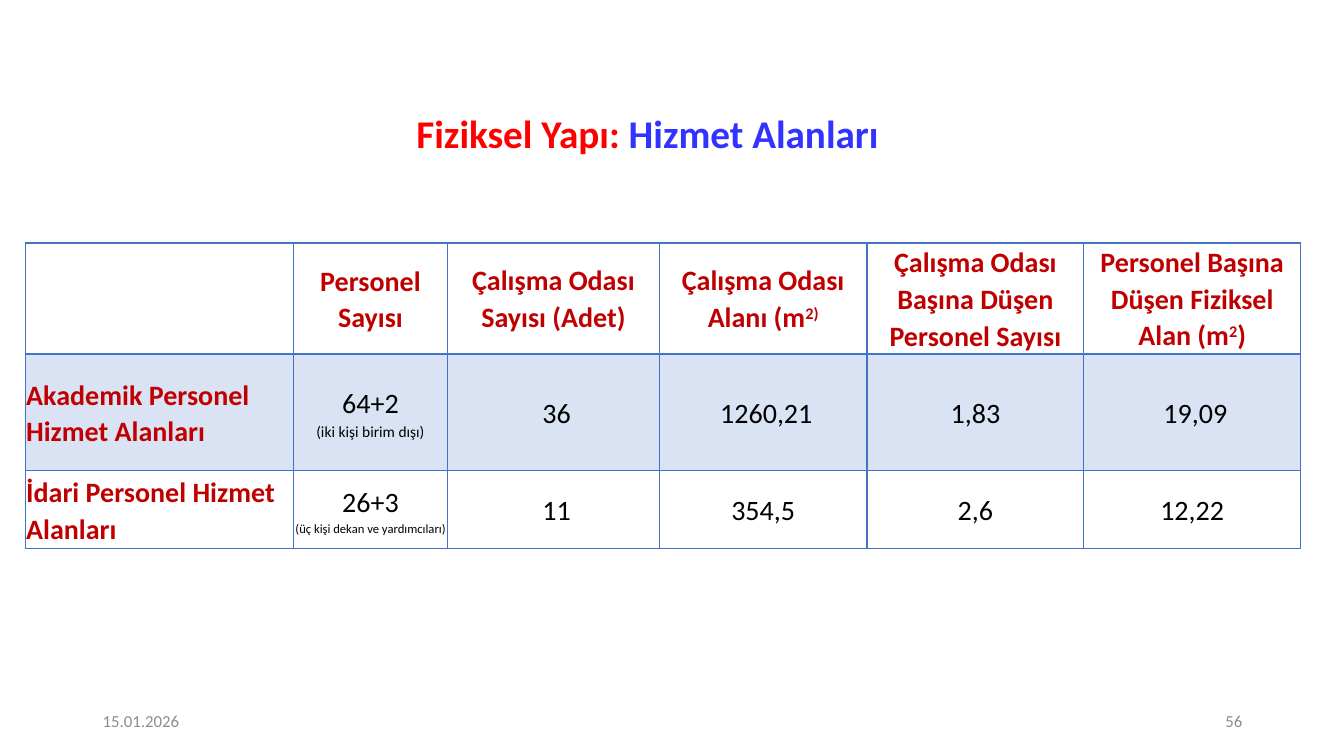
from lxml import etree
from pptx import Presentation
from pptx.dml.color import RGBColor
from pptx.enum.text import MSO_ANCHOR, PP_ALIGN
from pptx.oxml.ns import qn
from pptx.util import Inches, Pt

MIDDLE = MSO_ANCHOR.MIDDLE
LEFT, CENTER, RIGHT = PP_ALIGN.LEFT, PP_ALIGN.CENTER, PP_ALIGN.RIGHT
RED = RGBColor(0xFF, 0x00, 0x00)
BLUE = RGBColor(0x33, 0x33, 0xFF)
DARK_RED = RGBColor(0xC0, 0x00, 0x00)
BLACK = RGBColor(0x00, 0x00, 0x00)
GRAY = RGBColor(0x8C, 0x8C, 0x8C)
BORDER_BLUE = RGBColor(0x44, 0x72, 0xC4)
PALE_BLUE = RGBColor(0xDA, 0xE3, 0xF3)


def add_text(paragraph, text, size=20, color=BLACK, bold=False, align=CENTER, spacing=1.07, superscript=False):
    paragraph.alignment = align
    paragraph.line_spacing = spacing
    run = paragraph.add_run()
    run.text = text
    run.font.name = "Calibri"
    run.font.size = Pt(size)
    run.font.bold = bold
    run.font.color.rgb = color
    if superscript:
        run._r.get_or_add_rPr().set("baseline", "30000")


def add_borders(cell, widths):
    properties = cell._tc.get_or_add_tcPr()
    for side, width in zip(("lnL", "lnR", "lnT", "lnB"), widths):
        line = etree.SubElement(properties, qn(f"a:{side}"), w=str(Pt(width)))
        fill = etree.SubElement(line, qn("a:solidFill"))
        etree.SubElement(fill, qn("a:srgbClr"), val=str(BORDER_BLUE))


presentation = Presentation()
presentation.slide_width = Inches(13.33)
presentation.slide_height = Inches(7.5)
slide = presentation.slides.add_slide(presentation.slide_layouts[5])

title = slide.shapes.title
title.left, title.top = Inches(0.92), Inches(1.01)
title.width, title.height = Inches(11.09), Inches(0.67)
title.text_frame.vertical_anchor = MIDDLE
title_paragraph = title.text_frame.paragraphs[0]
for text, color in (("Fiziksel Yapı: ", RED), ("Hizmet Alanları ", BLUE)):
    add_text(title_paragraph, text, size=28, color=color, bold=True, spacing=0.9)

for left, text, align in ((0.92, "15.01.2026", LEFT), (9.42, "56", RIGHT)):
    footer = slide.shapes.add_textbox(Inches(left), Inches(6.95), Inches(3), Inches(0.4))
    footer.text_frame.word_wrap = True
    footer.text_frame.vertical_anchor = MIDDLE
    add_text(footer.text_frame.paragraphs[0], text, size=12, color=GRAY, align=align, spacing=1)

column_widths = (2.66, 1.53, 2.1, 2.06, 2.15, 2.15)
row_heights = (1.1, 1.16, 0.77)
headers = (
    (),
    ("Personel Sayısı",),
    ("Çalışma Odası Sayısı (Adet)",),
    ("Çalışma Odası Alanı (m", "2)"),
    ("Çalışma Odası Başına Düşen Personel Sayısı",),
    ("Personel Başına Düşen Fiziksel Alan (m", "2", ")"),
)
service_areas = (
    ("Akademik Personel Hizmet Alanları", "64+2", " 36", " 1260,21", "1,83", " 19,09"),
    ("İdari Personel Hizmet Alanları", "26+3", " 11", "354,5", "2,6", "12,22"),
)
staff_notes = (("(iki kişi birim dışı)", 11), ("(üç kişi dekan ve yardımcıları)", 9))

table = slide.shapes.add_table(
    len(row_heights), len(column_widths),
    Inches(0.25), Inches(2.41), Inches(sum(column_widths)), Inches(sum(row_heights)),
).table
table.first_row = False
table.horz_banding = False
for column, width in zip(table.columns, column_widths):
    column.width = Inches(width)

for row_index, height in enumerate(row_heights):
    table.rows[row_index].height = Inches(height)
    for column_index in range(len(column_widths)):
        cell = table.cell(row_index, column_index)
        cell.vertical_anchor = MIDDLE
        inset = Inches(0.01 if column_index in (0, 1, 4) else 0)
        cell.margin_left = cell.margin_right = cell.margin_top = inset
        cell.margin_bottom = 0
        add_borders(cell, (1, 1, 2 if row_index == 1 else 1, 2 if row_index == 0 else 1))
        if row_index == 1:
            cell.fill.solid()
            cell.fill.fore_color.rgb = PALE_BLUE
        else:
            cell.fill.background()

for column_index, parts in enumerate(headers):
    paragraph = table.cell(0, column_index).text_frame.paragraphs[0]
    for part_index, text in enumerate(parts):
        add_text(paragraph, text, color=DARK_RED, bold=True, superscript=part_index == 1)

for row_index, (values, note) in enumerate(zip(service_areas, staff_notes), start=1):
    for column_index, text in enumerate(values):
        paragraph = table.cell(row_index, column_index).text_frame.paragraphs[0]
        if column_index == 0:
            add_text(paragraph, text, color=DARK_RED, bold=True, align=LEFT)
        else:
            add_text(paragraph, text)
    note_text, note_size = note
    add_text(table.cell(row_index, 1).text_frame.add_paragraph(), note_text, size=note_size)

presentation.save("out.pptx")
